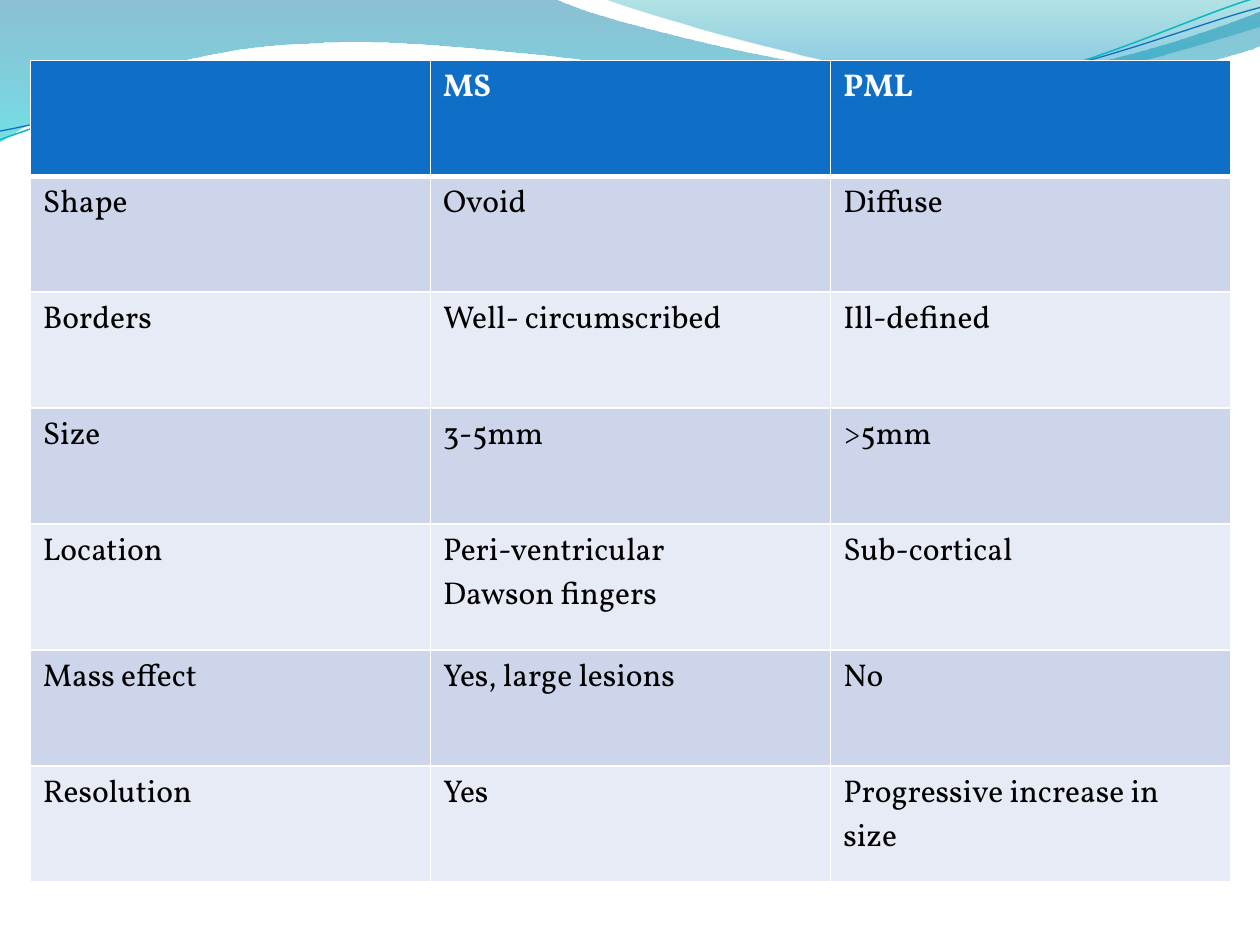
import pptx
import pptx.dml.color
import pptx.oxml
import pptx.oxml.ns
import pptx.util

COLORS = {
    "header": "0F6FC6", "odd": "CCD5EA", "even": "E7EBF5",
    "white": "FFFFFF", "text": "000000", "teal": "0AB8BF",
    "deep_blue": "0074A1", "cyan": "00C6CF",
    "sea_green": "00A1A9", "sky_blue": "008BBF",
}

# A path is a list of segments: one point is a straight line,
# three points are a cubic curve.
LEFT_WAVE = [
    [(0, 0)], [(4.4, -0.01)],
    [(4.76, 0.17), (6.64, 0.63), (7.58, 0.63)],
    [(8.53, 0.63), (9.58, 0.26), (10, 0.09)],
    [(10.01, 0.36)],
    [(9.83, 0.44), (8.7, 0.76), (7.46, 0.75)],
    [(6.22, 0.75), (3.82, 0.28), (2.57, 0.34)],
    [(1.29, 0.36), (0.46, 0.83), (-0.01, 1.13)],
]
RIGHT_WAVE = [
    [(4.79, -0.01)],
    [(5.09, 0.11), (6.82, 0.62), (7.69, 0.65)],
    [(8.56, 0.69), (9.61, 0.32), (10, 0.21)],
    [(10, 0)],
]
TEAL_CURVE = [
    [(0, 1.11)],
    [(0.48, 0.93), (1.58, 0.57), (2.77, 0.52)],
    [(3.95, 0.47), (5.93, 0.89), (7.13, 0.8)],
    [(8.33, 0.71), (9.38, 0.15), (9.98, -0.02)],
]
BLUE_CURVE = [
    [(0, 1.04)],
    [(0.47, 0.96), (1.64, 0.61), (2.83, 0.56)],
    [(4.03, 0.51), (5.97, 0.84), (7.17, 0.75)],
    [(8.36, 0.67), (9.41, 0.21), (10, 0.06)],
]

COMPARISON = [
    ["", "MS", "PML"],
    ["Shape", "Ovoid", "Diffuse"],
    ["Borders", "Well- circumscribed", "Ill-defined"],
    ["Size", "3-5mm", ">5mm"],
    ["Location", "Peri-ventricular\nDawson fingers", "Sub-cortical"],
    ["Mass effect", "Yes, large lesions", "No"],
    ["Resolution", "Yes", "Progressive increase in size"],
]
ROW_HEIGHTS = [0.92, 0.92, 0.92, 0.92, 1, 0.92, 0.92]


def rgb(name):
    return pptx.dml.color.RGBColor.from_string(COLORS[name])


class SlideBuilder:
    """Draws on a slide whose grid has 10 columns and 7.5 rows."""

    def __init__(self, deck, columns=10):
        self.unit = deck.slide_width / columns
        self.page = deck.slides.add_slide(deck.slide_layouts[6])
        self.font = {"name": "Vollkorn", "size": pptx.util.Pt(18)}

    def grid(self, *lengths):
        return [pptx.util.Emu(round(length * self.unit)) for length in lengths]

    def outline(self, segments, closed):
        points = [self.grid(*point) for segment in segments for point in segment]
        builder = self.page.shapes.build_freeform(*points[0], scale=1.0)
        builder.add_line_segments(points[1:], close=closed)
        shape = builder.convert_to_shape()
        shape.shadow.inherit = False
        self.bend(shape, segments)
        return shape

    def bend(self, shape, segments):
        """Turn each run of three straight steps of a curve into one Bezier."""
        steps = iter(list(shape.element.iter(pptx.oxml.ns.qn("a:lnTo"))))
        for segment in segments[1:]:
            group = [next(steps) for _ in segment]
            if len(group) == 3:
                curve = pptx.oxml.parse_xml(
                    f'<a:cubicBezTo {pptx.oxml.ns.nsdecls("a")}/>')
                group[0].addprevious(curve)
                for step in group:
                    curve.append(step[0])
                    step.getparent().remove(step)

    def wave(self, segments, stops):
        """Fill an outline from top to bottom; a stop is position, colour, opacity."""
        shape = self.outline(segments, True)
        shape.line.fill.background()
        shape.fill.gradient()
        shape.fill.gradient_angle = 270
        for stop, (position, color, _) in zip(shape.fill.gradient_stops, stops):
            stop.position = position
            stop.color.rgb = rgb(color)
        tints = shape.element.spPr.iter(pptx.oxml.ns.qn("a:srgbClr"))
        for tint, (_, _, opacity) in zip(tints, stops):
            tint.append(pptx.oxml.parse_xml(
                f'<a:alpha {pptx.oxml.ns.nsdecls("a")} val="{opacity * 1000}"/>'))

    def curve(self, segments, color, width):
        shape = self.outline(segments, False)
        shape.fill.background()
        shape.line.color.rgb = rgb(color)
        shape.line.width = pptx.util.Pt(width)

    def borders(self, cell, widths):
        properties = cell._tc.get_or_add_tcPr()
        for side, width in zip("LRTB", widths):
            properties.append(pptx.oxml.parse_xml(
                f'<a:ln{side} {pptx.oxml.ns.nsdecls("a")} w="{pptx.util.Pt(width)}">'
                f'<a:solidFill><a:srgbClr val="{COLORS["white"]}"/></a:solidFill>'
                f'</a:ln{side}>'))

    def cell(self, cell, words, row):
        header = row == 0
        self.borders(cell, (1, 1, 3 if row == 1 else 1, 3 if header else 1))
        cell.fill.solid()
        cell.fill.fore_color.rgb = rgb(
            "header" if header else "odd" if row % 2 else "even")
        cell.text = words
        for para in cell.text_frame.paragraphs:
            for name, value in {**self.font, "bold": header}.items():
                for span in para.runs:
                    setattr(span.font, name, value)
                    span.font.color.rgb = rgb("white" if header else "text")

    def table(self, rows, heights, left, top, width):
        frame = self.page.shapes.add_table(
            len(rows), len(rows[0]), *self.grid(left, top, width, sum(heights)))
        table = frame.table
        table.horz_banding = False
        for line, height in zip(table.rows, self.grid(*heights)):
            line.height = height
        for row, texts in enumerate(rows):
            for column, words in enumerate(texts):
                self.cell(table.cell(row, column), words, row)


def main():
    deck = pptx.Presentation()
    deck.slide_width = pptx.util.Inches(10)
    deck.slide_height = pptx.util.Inches(7.5)
    slide = SlideBuilder(deck)
    slide.wave(LEFT_WAVE, [(0, "deep_blue", 45), (1, "cyan", 55)])
    slide.wave(RIGHT_WAVE, [(0, "sea_green", 30), (0.8, "sky_blue", 45)])
    slide.curve(TEAL_CURVE, "teal", 0.85)
    slide.curve(BLUE_CURVE, "header", 0.75)
    slide.table(COMPARISON, ROW_HEIGHTS, 0.24, 0.48, 9.53)
    deck.save("out.pptx")


if __name__ == "__main__":
    main()
